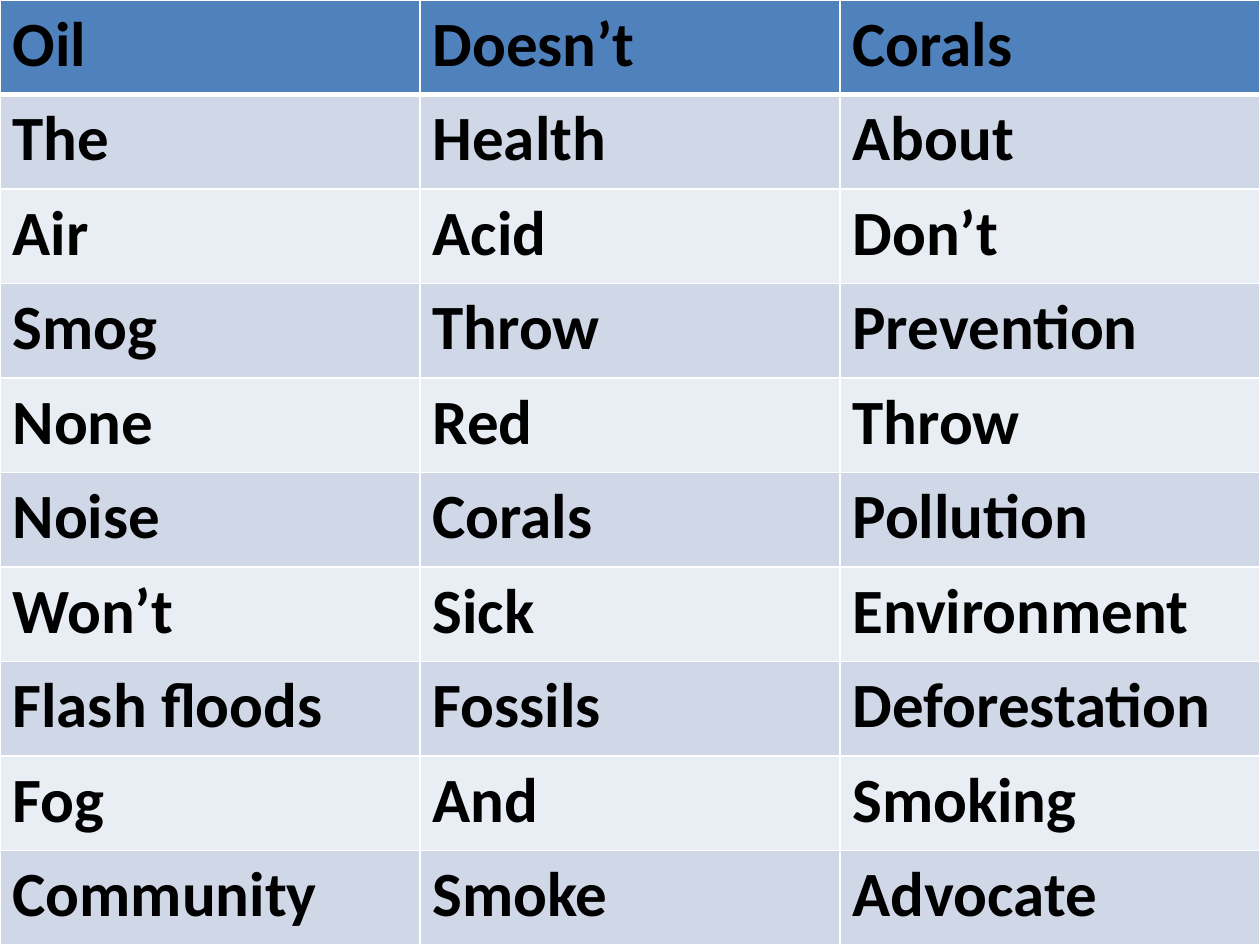
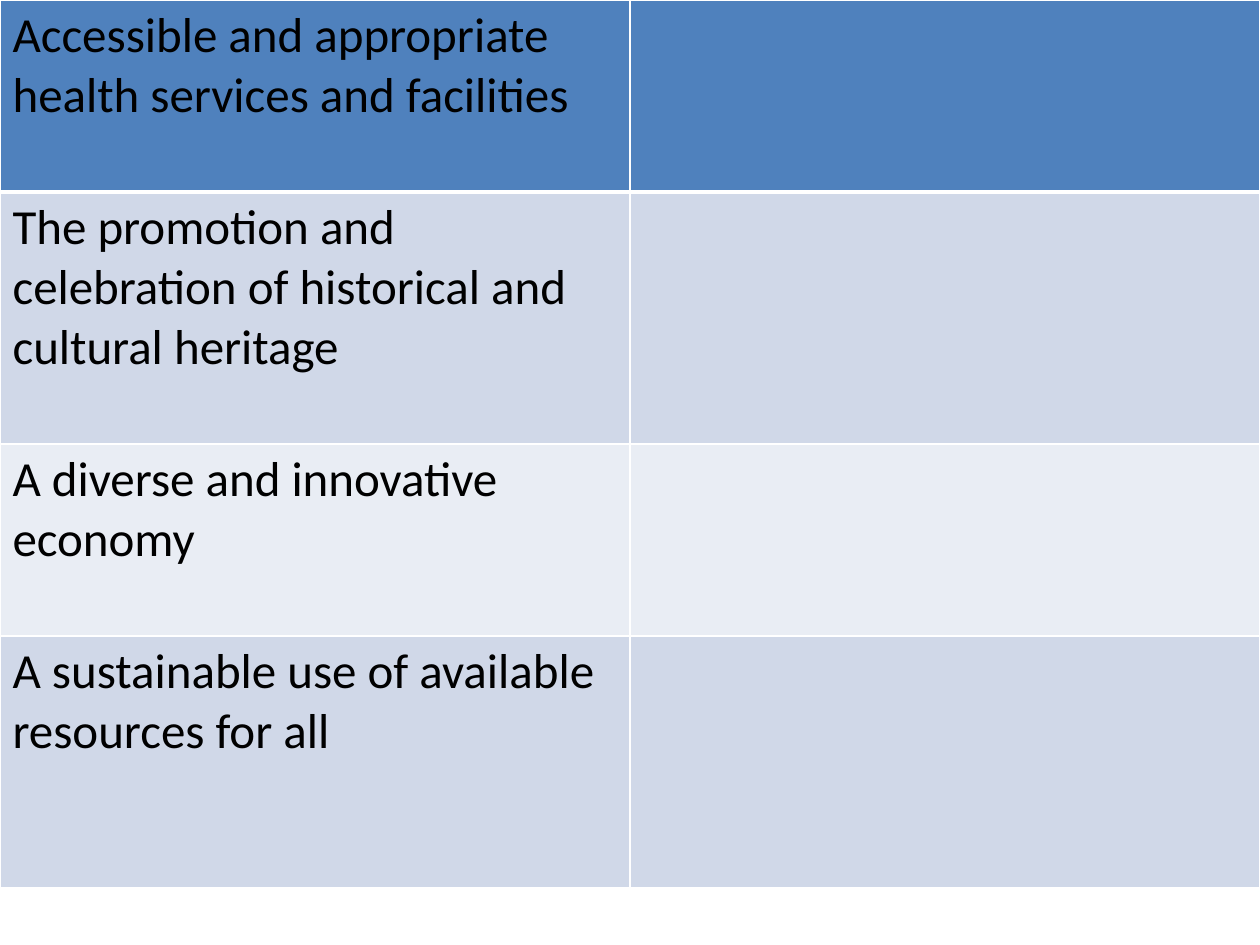
import dataclasses

import lxml.etree
import pptx
import pptx.dml.color
import pptx.oxml.ns
import pptx.util

Pt = pptx.util.Pt
qn = pptx.oxml.ns.qn


@dataclasses.dataclass(frozen=True)
class Theme:
    font: str = "Calibri"
    ink: str = "000000"
    header: str = "4F81BD"
    bands: tuple = ("D0D8E8", "E9EDF4")
    rule: str = "FFFFFF"
    thin: float = 1
    thick: float = 3
    word_size: float = 36
    aim_size: float = 28


THEME = Theme()
SLIDE_WIDTH, SLIDE_HEIGHT = 720, 540

WORDS = [
    ("Oil", "Doesn’t", "Corals"),
    ("The", "Health", "About"),
    ("Air", "Acid", "Don’t"),
    ("Smog", "Throw", "Prevention"),
    ("None", "Red", "Throw"),
    ("Noise", "Corals", "Pollution"),
    ("Won’t", "Sick", "Environment"),
    ("Flash floods", "Fossils", "Deforestation"),
    ("Fog", "And", "Smoking"),
    ("Community", "Smoke", "Advocate"),
]

AIMS = [
    ("Accessible and appropriate health services and facilities", ""),
    ("The promotion and celebration of historical and cultural heritage", ""),
    ("A diverse and innovative economy", ""),
    ("A sustainable use of available resources for all", ""),
]
AIM_HEIGHTS = [109.7, 144, 109.7, 144]


def rgb(value):
    return pptx.dml.color.RGBColor.from_string(value)


def write_text(frame, text, *, size, bold=False, color=THEME.ink):
    if not text:
        return
    run = frame.paragraphs[0].add_run()
    run.text = text
    run.font.name = THEME.font
    run.font.size = Pt(size)
    run.font.bold = bold
    run.font.color.rgb = rgb(color)


def rule_cell(cell, top, bottom):
    properties = cell._tc.get_or_add_tcPr()
    widths = {"lnL": THEME.thin, "lnR": THEME.thin, "lnT": top, "lnB": bottom}
    for side, width in widths.items():
        line = lxml.etree.SubElement(properties, qn(f"a:{side}"), w=str(Pt(width)))
        fill = lxml.etree.SubElement(line, qn("a:solidFill"))
        lxml.etree.SubElement(fill, qn("a:srgbClr"), val=THEME.rule)


def add_banded_table(slide, rows, heights, *, size, bold=False):
    column_count = len(rows[0])
    table = slide.shapes.add_table(
        len(rows), column_count, Pt(0), Pt(0), Pt(SLIDE_WIDTH), Pt(sum(heights))
    ).table
    for column in table.columns:
        column.width = Pt(SLIDE_WIDTH / column_count)
    for index, (entries, height) in enumerate(zip(rows, heights)):
        table.rows[index].height = Pt(height)
        band = THEME.bands[(index - 1) % 2] if index else THEME.header
        top = THEME.thick if index == 1 else THEME.thin
        bottom = THEME.thick if index == 0 else THEME.thin
        for cell, entry in zip(table.rows[index].cells, entries):
            rule_cell(cell, top, bottom)
            cell.fill.solid()
            cell.fill.fore_color.rgb = rgb(band)
            write_text(cell.text_frame, entry, size=size, bold=bold)


def main():
    deck = pptx.Presentation()
    deck.slide_width, deck.slide_height = Pt(SLIDE_WIDTH), Pt(SLIDE_HEIGHT)
    blank = deck.slide_layouts[6]
    word_heights = [SLIDE_HEIGHT / len(WORDS)] * len(WORDS)
    add_banded_table(deck.slides.add_slide(blank), WORDS, word_heights,
                     size=THEME.word_size, bold=True)
    add_banded_table(deck.slides.add_slide(blank), AIMS, AIM_HEIGHTS,
                     size=THEME.aim_size)
    deck.save("out.pptx")


if __name__ == "__main__":
    main()
